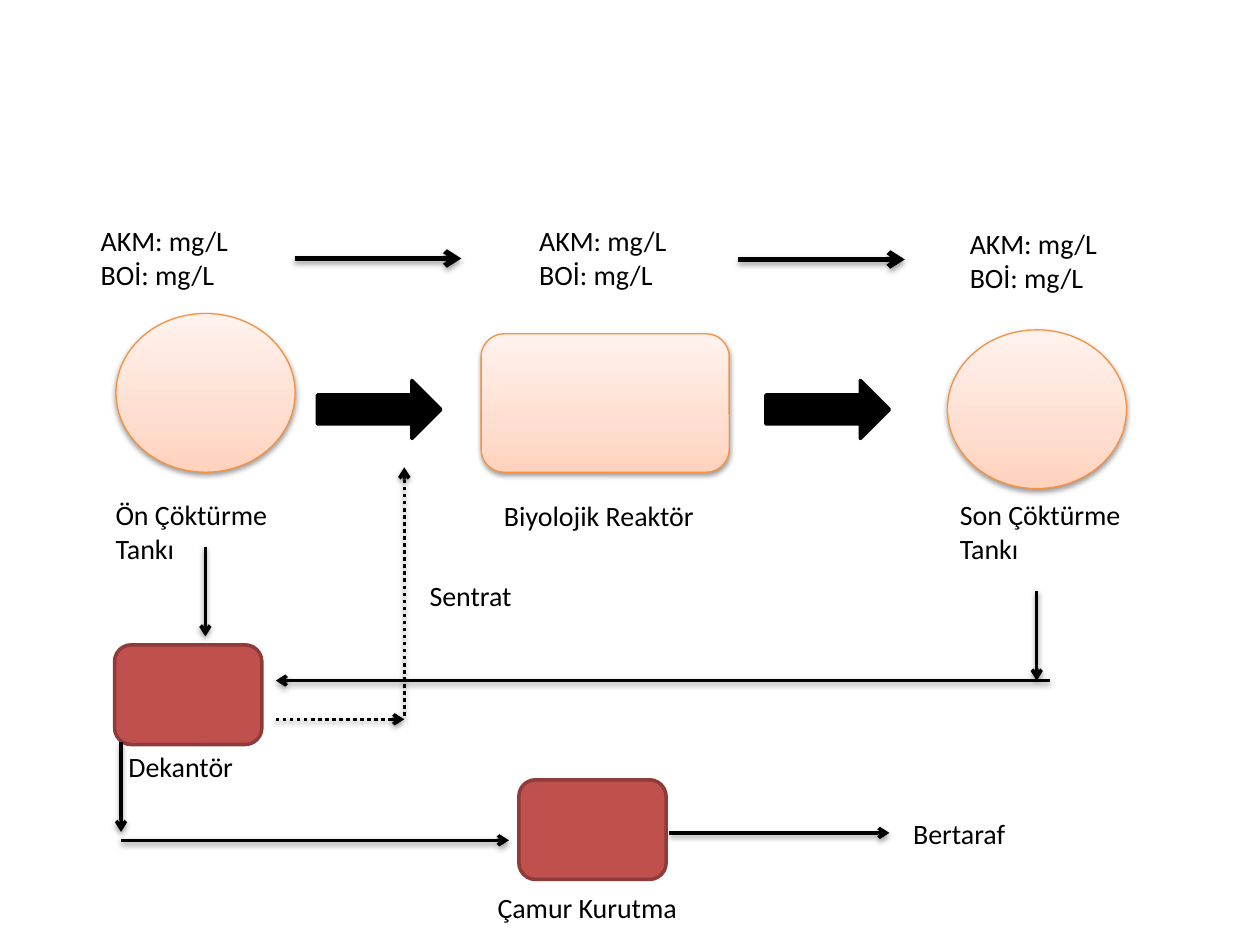
from copy import deepcopy

from lxml import etree
from pptx import Presentation
from pptx.dml.color import RGBColor
from pptx.enum.dml import MSO_LINE
from pptx.enum.shapes import MSO_CONNECTOR, MSO_SHAPE
from pptx.enum.text import MSO_AUTO_SIZE
from pptx.oxml.ns import qn
from pptx.util import Cm, Pt

ELLIPSE = MSO_SHAPE.OVAL
ROUNDED = MSO_SHAPE.ROUNDED_RECTANGLE
RIGHT_ARROW = MSO_SHAPE.RIGHT_ARROW
STRAIGHT = MSO_CONNECTOR.STRAIGHT
DOTTED = MSO_LINE.ROUND_DOT
GROW = MSO_AUTO_SIZE.SHAPE_TO_FIT_TEXT

COLORS = {
    "black": "000000",
    "tank_dark": "FFD2BD",
    "tank_middle": "FFDED0",
    "tank_light": "FFF2ED",
    "tank_line": "F69240",
    "sludge": "C0504D",
    "sludge_line": "8E3B39",
}


class FlowSlide:
    font_name = "Calibri"
    font_size = Pt(16)

    def __init__(self, slide):
        self.slide = slide

    def color(self, name):
        return RGBColor.from_string(COLORS[name])

    def add_shadow(self, shape, opacity=38, distance=1.6):
        effects = etree.SubElement(shape._element.spPr, qn("a:effectLst"))
        shadow = etree.SubElement(
            effects, qn("a:outerShdw"), blurRad=str(Pt(3.1)),
            dist=str(Pt(distance)), dir="5400000", rotWithShape="0",
        )
        color = etree.SubElement(shadow, qn("a:srgbClr"), val=COLORS["black"])
        etree.SubElement(color, qn("a:alpha"), val=str(opacity * 1000))

    def add_outlined(self, kind, left, top, width, height, line_color, line_width):
        shape = self.slide.shapes.add_shape(kind, Cm(left), Cm(top), Cm(width), Cm(height))
        shape.line.color.rgb = self.color(line_color)
        shape.line.width = Pt(line_width)
        return shape

    def add_block(self, kind, left, top, width, height, fill, line_color):
        shape = self.add_outlined(kind, left, top, width, height, line_color, 2)
        shape.fill.solid()
        shape.fill.fore_color.rgb = self.color(fill)
        shape.shadow.inherit = False

    def add_tank(self, kind, left, top, width, height):
        shape = self.add_outlined(kind, left, top, width, height, "tank_line", 0.75)
        shape.fill.gradient()
        shape.fill.gradient_angle = 90
        for stop, name in zip(shape.fill.gradient_stops, ("tank_dark", "tank_light")):
            stop.color.rgb = self.color(name)
        first_stop = shape._element.spPr.find(".//" + qn("a:gs"))
        middle_stop = deepcopy(first_stop)
        middle_stop.set("pos", "35000")
        middle_stop.find(qn("a:srgbClr")).set("val", COLORS["tank_middle"])
        first_stop.addnext(middle_stop)
        self.add_shadow(shape)

    def add_label(self, left, top, width, height, *lines):
        box = self.slide.shapes.add_textbox(Cm(left), Cm(top), Cm(width), Cm(height))
        frame = box.text_frame
        frame.word_wrap = True
        frame.auto_size = GROW
        frame.text = "\n".join(lines)
        for paragraph in frame.paragraphs:
            paragraph.font.name = self.font_name
            paragraph.font.size = self.font_size
            paragraph.font.color.rgb = self.color("black")

    def add_arrow(self, start, end, width=2, dash=None, opacity=38, distance=1.6):
        points = [Cm(value) for value in (*start, *end)]
        connector = self.slide.shapes.add_connector(STRAIGHT, *points)
        connector.line.color.rgb = self.color("black")
        connector.line.width = Pt(width)
        if dash:
            connector.line.dash_style = dash
        line = connector._element.spPr.find(qn("a:ln"))
        etree.SubElement(line, qn("a:tailEnd"), type="arrow")
        self.add_shadow(connector, opacity, distance)


def main():
    presentation = Presentation()
    presentation.slide_width = Cm(25.4)
    presentation.slide_height = Cm(19.05)
    flow = FlowSlide(presentation.slides.add_slide(presentation.slide_layouts[6]))

    flow.add_tank(ELLIPSE, 2.34, 6.32, 3.61, 3.2)
    flow.add_tank(ELLIPSE, 19.1, 6.65, 3.61, 3.2)
    flow.add_tank(ROUNDED, 9.7, 6.73, 5, 2.79)
    for left in (6.4, 15.44):
        flow.add_block(RIGHT_ARROW, left, 7.67, 2.49, 1.17, "black", "black")

    flow.add_label(2.08, 9.91, 4.57, 1.63, "Ön Çöktürme Tankı")
    flow.add_label(19.1, 9.91, 4.57, 1.63, "Son Çöktürme Tankı")
    flow.add_label(9.91, 9.93, 4.57, 0.94, "Biyolojik Reaktör")
    for left, top in ((1.78, 4.39), (10.62, 4.39), (19.3, 4.45)):
        flow.add_label(left, top, 3.2, 1.63, "AKM: mg/L", "BOİ: mg/L")

    for left, top in ((5.94, 5.21), (14.88, 5.23)):
        flow.add_arrow((left, top), (left + 3.36, top), width=3, opacity=35, distance=1.8)
    for left, top in ((20.9, 11.91), (4.14, 11.02)):
        flow.add_arrow((left, top), (left, top + 1.81))
    flow.add_arrow((21.16, 13.72), (5.56, 13.72))

    flow.add_block(ROUNDED, 2.31, 13, 2.97, 2.01, "sludge", "sludge_line")
    flow.add_label(2.34, 14.99, 3.02, 0.94, "Dekantör")
    flow.add_arrow((5.56, 14.5), (8.15, 14.5), dash=DOTTED)
    flow.add_arrow((8.15, 14.43), (8.15, 9.42), dash=DOTTED)
    flow.add_label(8.41, 11.53, 2.21, 0.94, "Sentrat")

    flow.add_arrow((2.44, 14.96), (2.44, 16.77))
    flow.add_arrow((2.44, 16.94), (10.26, 16.94))
    flow.add_block(ROUNDED, 10.46, 15.72, 2.97, 2.01, "sludge", "sludge_line")
    flow.add_label(9.78, 17.83, 4.32, 0.94, "Çamur Kurutma")
    flow.add_arrow((13.49, 16.79), (17.93, 16.79))
    flow.add_label(18.16, 16.33, 2.72, 0.94, "Bertaraf")

    presentation.save("out.pptx")


if __name__ == "__main__":
    main()
